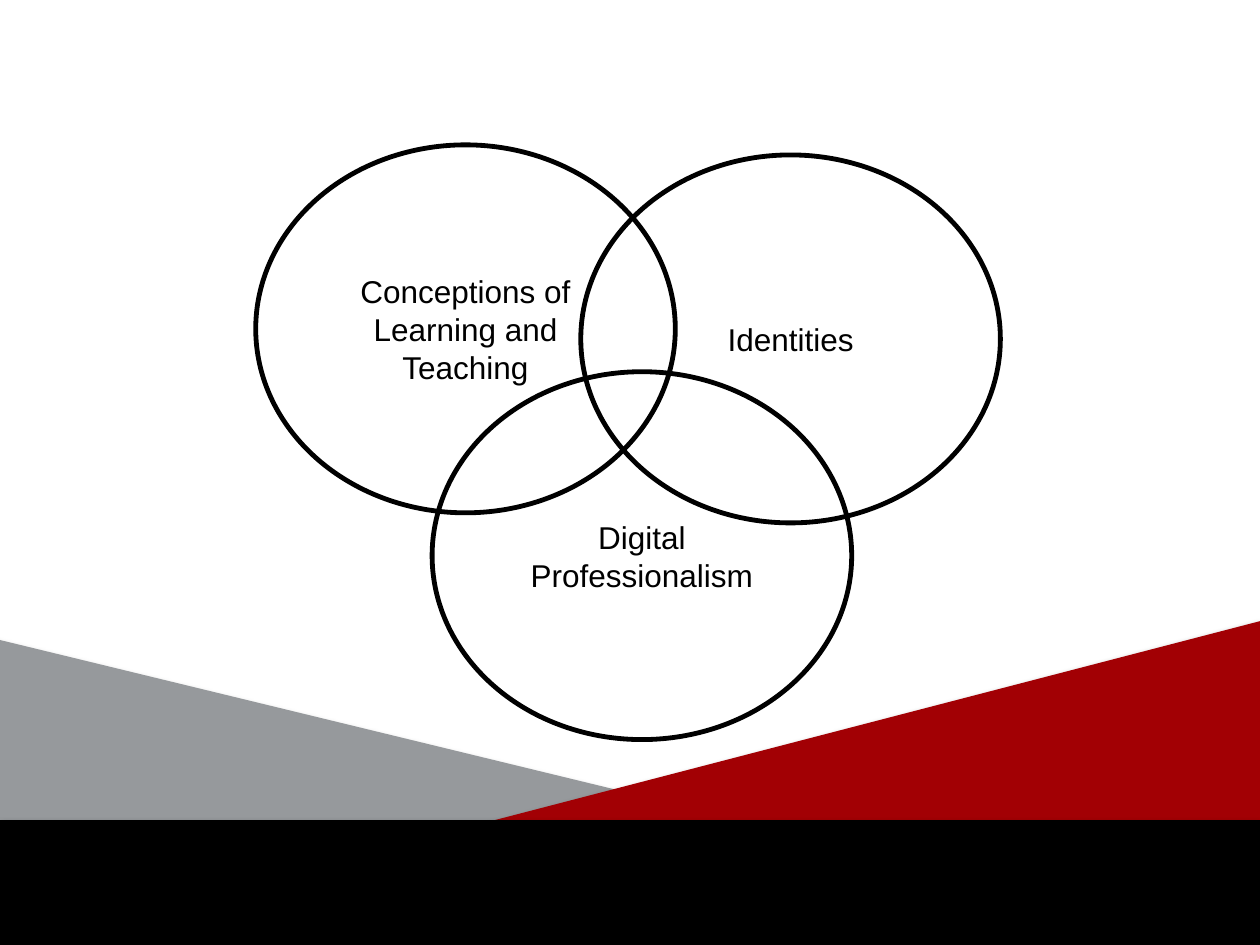
from dataclasses import dataclass
from typing import Optional

from lxml import etree
from pptx import Presentation
from pptx.dml.color import RGBColor
from pptx.enum.shapes import MSO_SHAPE
from pptx.enum.text import MSO_ANCHOR, PP_ALIGN
from pptx.oxml.ns import qn
from pptx.util import Inches, Pt

OVAL = MSO_SHAPE.OVAL
TRIANGLE = MSO_SHAPE.RIGHT_TRIANGLE
RECTANGLE = MSO_SHAPE.RECTANGLE
CENTER = PP_ALIGN.CENTER
MIDDLE = MSO_ANCHOR.MIDDLE

WHITE = RGBColor(0xFF, 0xFF, 0xFF)
BLACK = RGBColor(0x00, 0x00, 0x00)
GRAY = RGBColor(0x96, 0x99, 0x9C)
RED = RGBColor(0xA2, 0x00, 0x04)

FONT = "Arial"
CIRCLE_WIDTH, CIRCLE_HEIGHT = 3.33, 2.92
BLANK_LAYOUT = 6


@dataclass(frozen=True)
class Topic:
    label: str
    left: float
    top: float
    fill: Optional[RGBColor] = None


@dataclass(frozen=True)
class Band:
    preset: MSO_SHAPE
    left: float
    top: float
    width: float
    height: float
    color: RGBColor
    shadow_distance: float
    shadow_opacity: int
    rotation: float = 0


TOPICS = [
    Topic("Conceptions of Learning and Teaching", 2.03, 1.15, WHITE),
    Topic("Identities", 4.61, 1.23),
    Topic("Digital Professionalism", 3.43, 2.95),
]

FOOTER_BANDS = [
    Band(TRIANGLE, -0.04, 5.07, 10, 2.43, GRAY, 1.8, 35),
    Band(TRIANGLE, 3.7, 1.23, 2.6, 10, RED, 1.8, 35, rotation=270),
    Band(RECTANGLE, 0, 6.51, 10, 0.99, BLACK, 1.6, 38),
]


def write_text(shape, text: str, *, size: float = 18, color: RGBColor = BLACK,
               align=CENTER, anchor=MIDDLE) -> None:
    frame = shape.text_frame
    frame.word_wrap = True
    frame.vertical_anchor = anchor
    paragraph = frame.paragraphs[0]
    paragraph.alignment = align
    run = paragraph.add_run()
    run.text = text
    run.font.name = FONT
    run.font.size = Pt(size)
    run.font.color.rgb = color


def add_soft_shadow(shape, distance: float, opacity: int) -> None:
    """Cast a downward shadow; distance in points, opacity in percent."""
    shape.shadow.inherit = False
    effects = shape.element.spPr.find(qn("a:effectLst"))
    shadow = etree.SubElement(
        effects, qn("a:outerShdw"), blurRad=str(Pt(3.1)),
        dist=str(Pt(distance)), dir="5400000", rotWithShape="0")
    color = etree.SubElement(shadow, qn("a:srgbClr"), val=str(BLACK))
    etree.SubElement(color, qn("a:alpha"), val=str(opacity * 1000))


def draw_topic(slide, topic: Topic) -> None:
    circle = slide.shapes.add_shape(
        OVAL, Inches(topic.left), Inches(topic.top),
        Inches(CIRCLE_WIDTH), Inches(CIRCLE_HEIGHT))
    circle.shadow.inherit = False
    if topic.fill is None:
        circle.fill.background()
    else:
        circle.fill.solid()
        circle.fill.fore_color.rgb = topic.fill
    circle.line.color.rgb = BLACK
    circle.line.width = Pt(2.75)
    write_text(circle, topic.label)


def draw_band(slide, band: Band) -> None:
    shape = slide.shapes.add_shape(
        band.preset, Inches(band.left), Inches(band.top),
        Inches(band.width), Inches(band.height))
    shape.rotation = band.rotation
    shape.fill.solid()
    shape.fill.fore_color.rgb = band.color
    shape.line.fill.background()
    add_soft_shadow(shape, band.shadow_distance, band.shadow_opacity)


def main() -> None:
    presentation = Presentation()
    presentation.slide_width = Inches(10)
    presentation.slide_height = Inches(7.5)
    slide = presentation.slides.add_slide(presentation.slide_layouts[BLANK_LAYOUT])

    # Overlapping topics
    for topic in TOPICS:
        draw_topic(slide, topic)

    # Footer decoration
    for band in FOOTER_BANDS:
        draw_band(slide, band)

    presentation.save("out.pptx")


if __name__ == "__main__":
    main()
